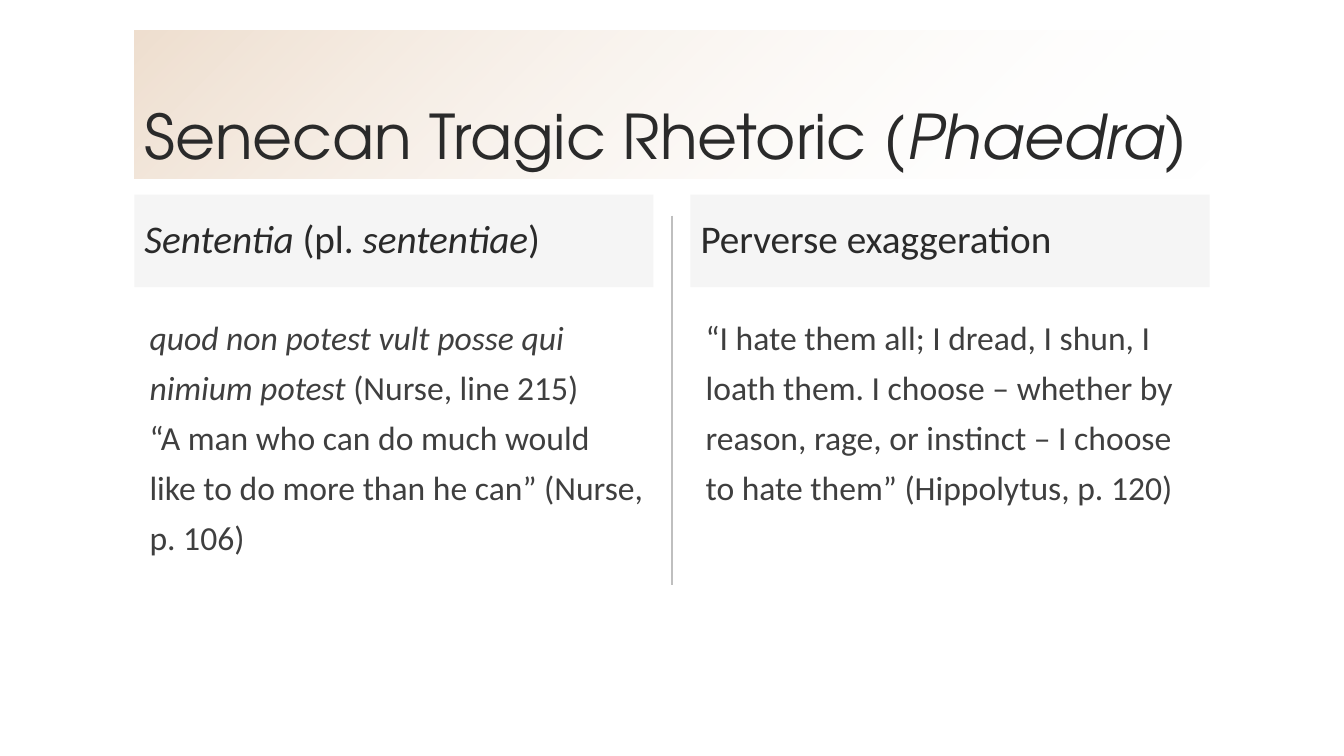
from pptx import Presentation
from pptx.dml.color import RGBColor
from pptx.enum.shapes import MSO_CONNECTOR
from pptx.enum.text import MSO_ANCHOR, MSO_AUTO_SIZE, PP_ALIGN
from pptx.oxml.ns import qn
from pptx.util import Pt
from lxml.etree import SubElement

COLORS = {
    "heading": "2A2A2A",
    "body": "3F3F3F",
    "gray": "BFBFBF",
    "tan": "CE9F71",
    "white": "FFFFFF",
}
LEFT, WIDTH = 96, 768
COLUMN_WIDTH, COLUMN_STEP = 370.8, 397.2
COLUMNS = [
    (
        "*Sententia* (pl. *sententiae*)",
        [
            "*quod non potest vult posse qui nimium potest* (Nurse, line 215)",
            "“A man who can do much would like to do more than he can” (Nurse, p. 106)",
        ],
    ),
    (
        "Perverse exaggeration",
        [
            "“I hate them all; I dread, I shun, I loath them. I choose – whether by reason, "
            "rage, or instinct – I choose to hate them” (Hippolytus, p. 120)",
        ],
    ),
]


class ComparisonSlide:
    """Holds the style and the current slide and draws its elements."""

    def __init__(self, presentation):
        self.slide = presentation.slides.add_slide(presentation.slide_layouts[4])
        self.placeholders = {
            shape.placeholder_format.idx: shape for shape in self.slide.placeholders
        }

    def color(self, name):
        return RGBColor.from_string(COLORS[name])

    def set_alpha(self, fill_element, percents):
        for color, percent in zip(fill_element.iter(qn("a:srgbClr")), percents):
            SubElement(color, qn("a:alpha"), val=str(percent * 1000))

    def text(self, index, box, paragraphs, size, color, anchor,
             font="Calibri", spacing=0.9, indent=0):
        """Fill a placeholder; asterisks enclose italic words."""
        shape = self.placeholders[index]
        shape.left, shape.top, shape.width, shape.height = map(Pt, box)
        frame = shape.text_frame
        frame.word_wrap = True
        frame.auto_size = MSO_AUTO_SIZE.NONE
        frame.vertical_anchor = anchor
        for number, content in enumerate(paragraphs):
            paragraph = frame.add_paragraph() if number else frame.paragraphs[0]
            paragraph.alignment = PP_ALIGN.LEFT
            paragraph.line_spacing = spacing
            paragraph.space_before = paragraph.space_after = Pt(0)
            properties = paragraph._p.get_or_add_pPr()
            properties.set("marL", str(Pt(indent)))
            properties.set("indent", "0")
            SubElement(properties, qn("a:buNone"))
            paragraph.font.name = font
            paragraph.font.size = Pt(size)
            paragraph.font.bold = False
            paragraph.font.color.rgb = self.color(color)
            for position, part in enumerate(content.split("*")):
                if part:
                    run = paragraph.add_run()
                    run.text = part
                    run.font.italic = position % 2 == 1
        return shape

    def title(self, content):
        shape = self.text(0, (LEFT, 21.6, WIDTH, 105.6), [content], 44, "heading",
                          MSO_ANCHOR.BOTTOM, font="TeX Gyre Adventor")
        shape.fill.gradient()
        shape.fill.gradient_angle = 315
        for stop, name in zip(shape.fill.gradient_stops, ("tan", "white")):
            stop.color.rgb = self.color(name)
        self.set_alpha(shape._element.spPr.find(qn("a:gradFill")), (34, 0))

    def heading(self, index, left, content):
        shape = self.text(index, (left, 139, COLUMN_WIDTH, 66.2), [content], 28,
                          "heading", MSO_ANCHOR.MIDDLE)
        shape.fill.solid()
        shape.fill.fore_color.rgb = self.color("gray")
        self.set_alpha(shape._element.spPr.find(qn("a:solidFill")), (15,))

    def body(self, index, left, paragraphs):
        self.text(index, (left, 216, COLUMN_WIDTH, 270), paragraphs, 24, "body",
                  MSO_ANCHOR.TOP, spacing=1.24, indent=3.6)

    def divider(self, x, top, bottom):
        line = self.slide.shapes.add_connector(
            MSO_CONNECTOR.STRAIGHT, Pt(x), Pt(top), Pt(x), Pt(bottom))
        line.line.color.rgb = self.color("gray")
        line.line.width = Pt(1)
        SubElement(line._element.spPr, qn("a:effectLst"))


def main():
    presentation = Presentation()
    presentation.slide_width, presentation.slide_height = Pt(960), Pt(540)
    comparison = ComparisonSlide(presentation)
    comparison.title("Senecan Tragic Rhetoric (*Phaedra*)")
    for number, (heading, paragraphs) in enumerate(COLUMNS):
        left = LEFT + number * COLUMN_STEP
        comparison.heading(1 + 2 * number, left, heading)
        comparison.body(2 + 2 * number, left, paragraphs)
    comparison.divider(480, 154, 417.6)
    presentation.save("out.pptx")


if __name__ == "__main__":
    main()
